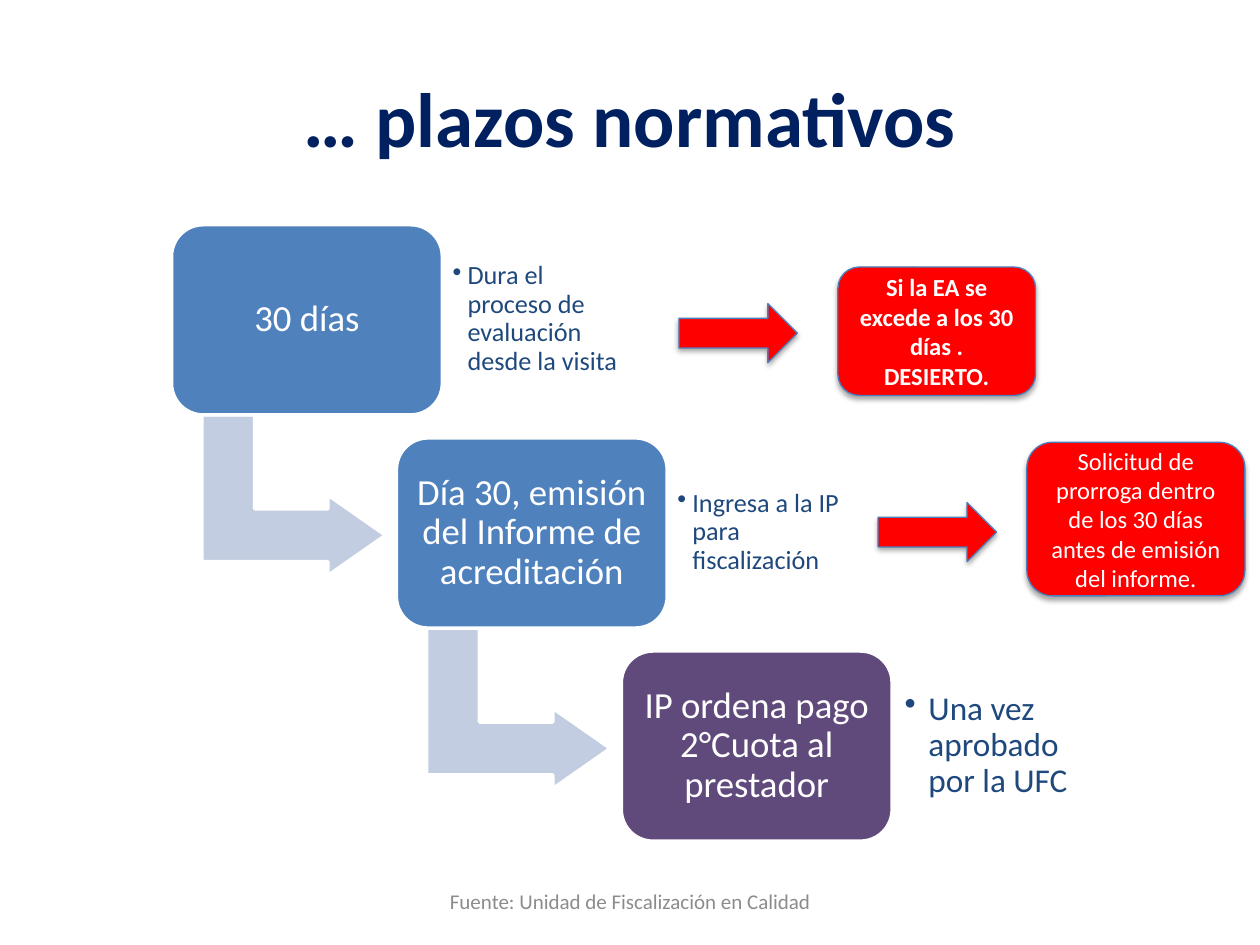
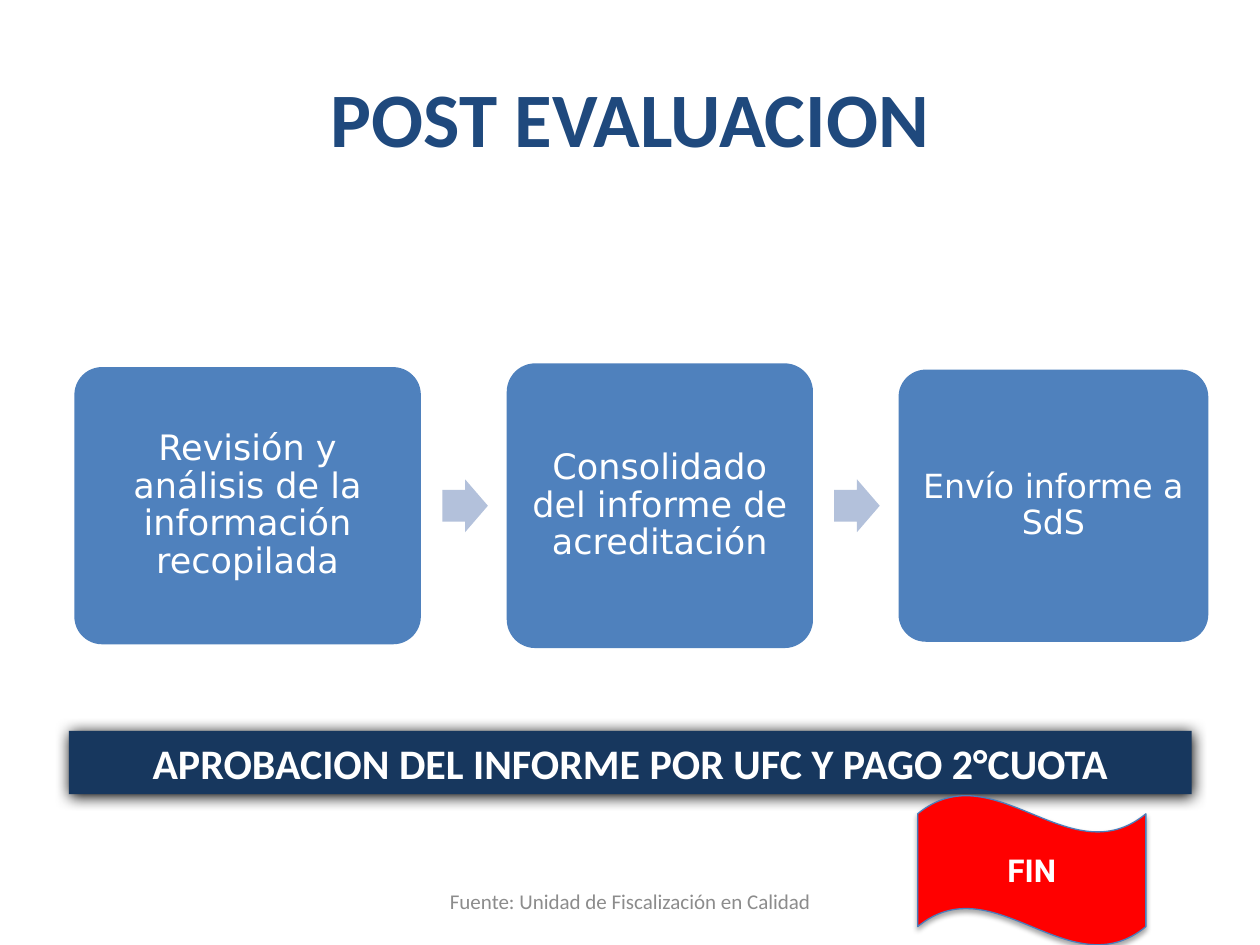
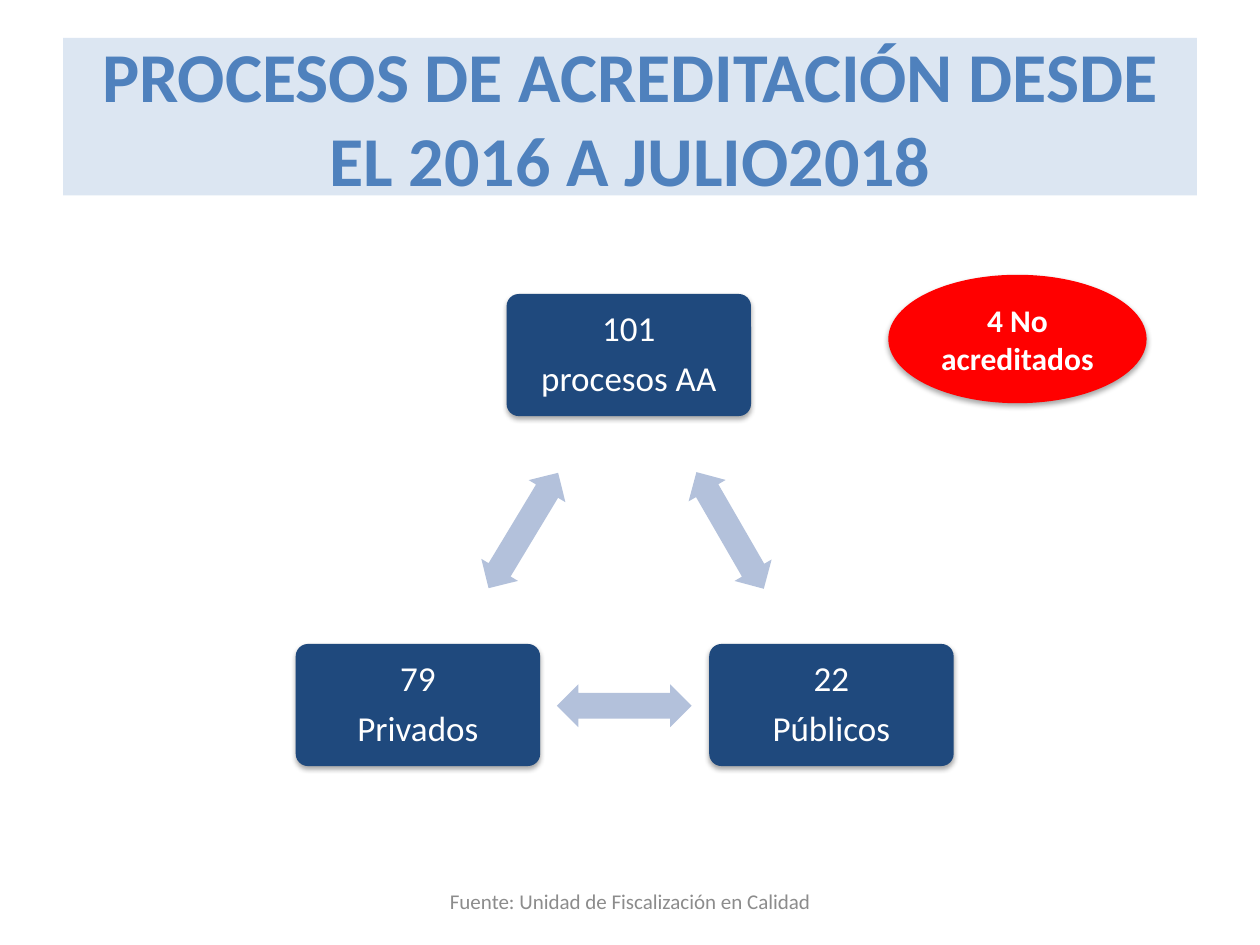
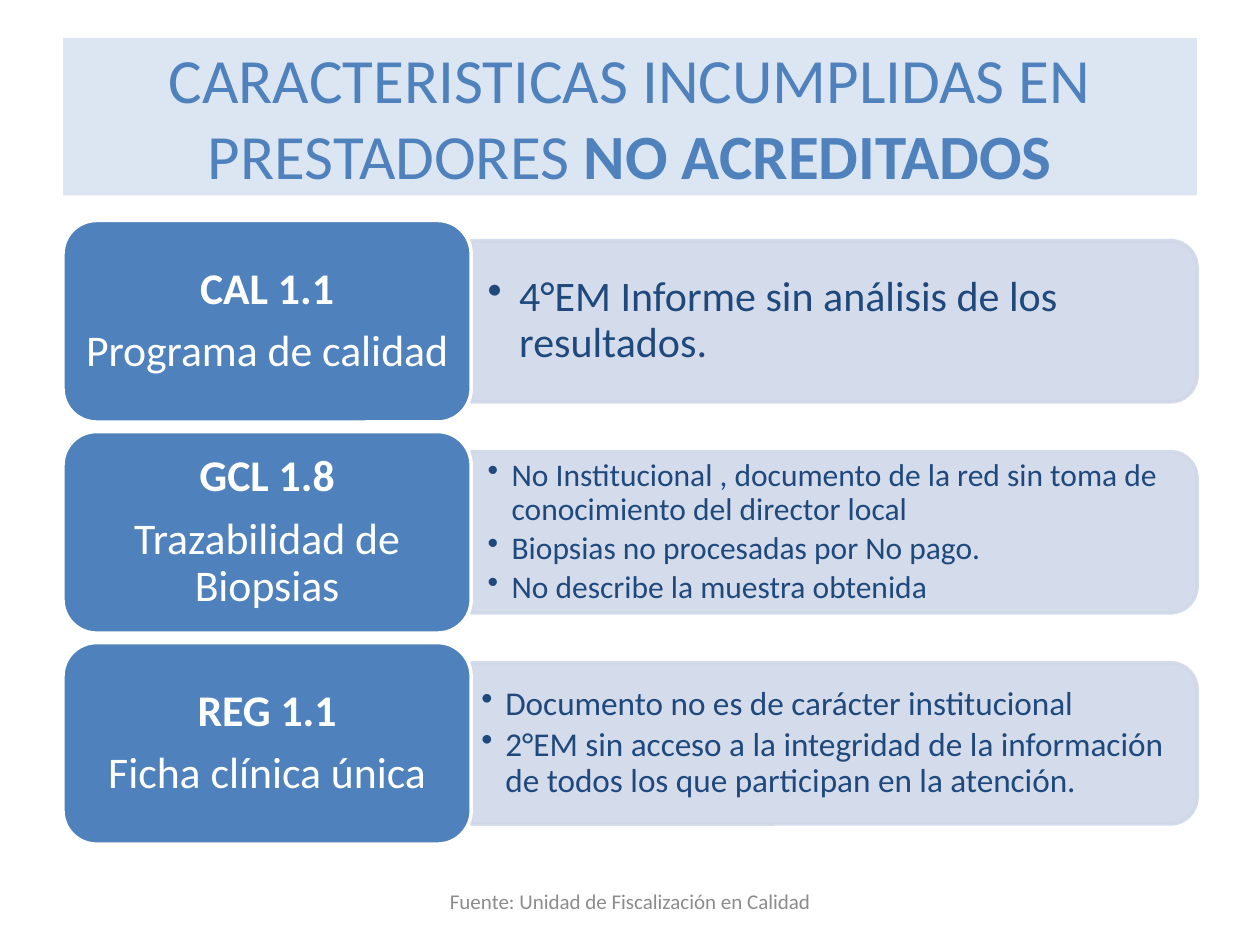
from lxml.etree import SubElement
from pptx import Presentation
from pptx.dml.color import RGBColor
from pptx.enum.shapes import MSO_SHAPE as Form
from pptx.enum.text import MSO_ANCHOR as Anchor, MSO_AUTO_SIZE as AutoSize, PP_ALIGN as Align
from pptx.oxml.ns import qn
from pptx.util import Pt

COLORS = {
    "white": "FFFFFF",
    "navy": "002060",
    "blue": "4F81BD",
    "dark": "1F497D",
    "banner": "17375E",
    "purple": "604A7B",
    "red": "FF0000",
    "outline": "4B7EBC",
    "arrow": "B3C1DB",
    "bent": "C2CDE1",
    "detail": "D0D8E8",
    "band": "DCE6F2",
    "gray": "8C8C8C",
}
SOFT_SHADOW = {"blur": 3.1, "distance": 1.8, "opacity": 35}
BANNER_SHADOW = {"blur": 8.5, "distance": 1, "opacity": 100}
SOURCE = "Fuente: Unidad de Fiscalización en Calidad"
BOLD_MARK = "**"
DIAGRAM_TEXT = {"spacing": 0.9, "after": 0.35}


def color(name):
    return RGBColor.from_string(COLORS[name])


def add_bullet(para, indent):
    properties = para._p.get_or_add_pPr()
    properties.set("marL", str(Pt(indent)))
    properties.set("indent", str(-Pt(indent)))
    SubElement(properties, qn("a:buChar")).set("char", "•")


def write(frame, text, size=14, ink="white", font="Calibri", bold=False, align=Align.CENTER,
          spacing=None, after=0, indent=0, inset=(7.2, 3.6)):
    frame.word_wrap = True
    frame.auto_size = AutoSize.NONE
    frame.vertical_anchor = Anchor.MIDDLE
    frame.margin_left = frame.margin_right = Pt(inset[0])
    frame.margin_top = frame.margin_bottom = Pt(inset[1])
    for number, line in enumerate(text.split("\n")):
        para = frame.add_paragraph() if number else frame.paragraphs[0]
        para.alignment = align
        if spacing:
            para.line_spacing = spacing
            para.space_after = Pt(round(size * after, 2))
        if indent:
            para.level = 1
            add_bullet(para, indent)
        for place, part in enumerate(line.split(BOLD_MARK)):
            if part:
                span = para.add_run()
                span.text = part
                span.font.size = Pt(size)
                span.font.name = font
                span.font.bold = bold or place % 2 == 1
                span.font.color.rgb = color(ink)


def add_shadow(shape, blur, distance, opacity):
    effects = shape.element.spPr.find(qn("a:effectLst"))
    shadow = SubElement(effects, qn("a:outerShdw"), blurRad=str(Pt(blur)), dist=str(Pt(distance)),
                        dir="5400000", rotWithShape="0")
    black = SubElement(shadow, qn("a:srgbClr"), val="000000")
    SubElement(black, qn("a:alpha"), val=str(opacity * 1000))


def add_form(page, form, left, top, width, height, fill, line=None, weight=2, adjust=(),
             rotation=0, opacity=100, shadow=None, text="", **text_format):
    shape = page.shapes.add_shape(form, Pt(left), Pt(top), Pt(width), Pt(height))
    shape.rotation = rotation
    for number, value in enumerate(adjust):
        shape.adjustments[number] = value
    shape.fill.solid()
    shape.fill.fore_color.rgb = color(fill)
    if line:
        shape.line.color.rgb = color(line)
        shape.line.width = Pt(weight)
    else:
        shape.line.fill.background()
    if opacity < 100:
        for paint in shape.element.spPr.iter(qn("a:srgbClr")):
            SubElement(paint, qn("a:alpha"), val=str(opacity * 1000))
    shape.shadow.inherit = False
    if shadow:
        add_shadow(shape, **shadow)
    if text:
        write(shape.text_frame, text, **text_format)
    return shape


def add_alert(page, form, left, top, width, height, **options):
    return add_form(page, form, left, top, width, height, "red", line="outline", weight=0.75,
                    shadow=SOFT_SHADOW, **options)


def add_text(page, left, top, width, height, text, **text_format):
    box = page.shapes.add_textbox(Pt(left), Pt(top), Pt(width), Pt(height))
    write(box.text_frame, text, **text_format)


def add_bullets(page, left, top, width, height, text, **text_format):
    add_text(page, left, top, width, height, text, ink="dark", align=Align.LEFT,
             spacing=0.9, after=0.15, **text_format)


def add_page(deck, title, size, ink, bold=True, band=None):
    page = deck.slides.add_slide(deck.slide_layouts[5])
    heading = page.shapes.title
    heading.left, heading.top, heading.width, heading.height = Pt(36), Pt(21.6), Pt(648), Pt(90)
    if band:
        heading.fill.solid()
        heading.fill.fore_color.rgb = color(band)
    write(heading.text_frame, title, size=size, ink=ink, bold=bold)
    add_text(page, 246.2, 500.4, 228, 28.8, SOURCE, size=12, ink="gray")
    return page


def build_deadlines(deck):
    page = add_page(deck, "… plazos normativos", 44, "navy")
    steps = [
        ("30 días", "blue", "Dura el proceso de evaluación desde la visita", 15, 8.6, 5.8),
        ("Día 30, emisión del Informe de acreditación", "blue",
         "Ingresa a la IP para fiscalización", 15, 8.6, 5.8),
        ("IP ordena pago 2°Cuota al prestador", "purple",
         "Una vez aprobado por la UFC", 19, 13.7, 7.2),
    ]
    for number, (label, fill, note, size, indent, inset) in enumerate(steps):
        left, top = 98 + 128.5 * number, 128.4 + 121.8 * number
        if number < len(steps) - 1:
            add_form(page, Form.BENT_UP_ARROW, left + 23.8, top + 102, 92, 105, "bent",
                     line="white", adjust=(0.328, 0.25, 0.358), rotation=90)
        add_form(page, Form.ROUNDED_RECTANGLE, left, top, 154.8, 108.7, fill, line="white",
                 text=label, size=21, inset=(6.5, 6.5), **DIAGRAM_TEXT)
        add_bullets(page, left + 154.8, top + 10, 113, 87.8, note, size=size, indent=indent,
                    inset=(inset, inset))
    for left, top in ((388, 173.5), (501.8, 287.2)):
        add_alert(page, Form.RIGHT_ARROW, left, top, 67.7, 33.8)
    add_alert(page, Form.ROUNDED_RECTANGLE, 478.8, 152.6, 113, 73.4, bold=True,
              text="Si la EA se excede a los 30 días . DESIERTO.")
    add_alert(page, Form.ROUNDED_RECTANGLE, 586.8, 252.7, 124.6, 87.8,
              text="Solicitud de prorroga dentro de los 30 días antes de emisión del informe.")


def build_closing(deck):
    page = add_page(deck, "POST EVALUACION", 44, "dark")
    cards = [
        (42.5, 198, 158.4, "Revisión y análisis de la información recopilada", 20),
        (289.6, 175, 162.7, "Consolidado del informe de acreditación", 20),
        (513.5, 177, 155.5, "Envío informe a SdS", 19),
    ]
    middle = 289
    for number, (left, width, height, label, size) in enumerate(cards):
        if number:
            add_form(page, Form.RIGHT_ARROW, left - 36.8, middle - 15.1, 26, 30.2, "arrow",
                     adjust=(0.6, 0.5))
        add_form(page, Form.ROUNDED_RECTANGLE, left, middle - height / 2, width, height, "blue",
                 adjust=(0.1,), text=label, size=size, font="DejaVu Sans", inset=(5.8, 5.8),
                 **DIAGRAM_TEXT)
    add_form(page, Form.RECTANGLE, 39.4, 417.6, 641.5, 36.2, "banner", shadow=BANNER_SHADOW,
             text="APROBACION DEL INFORME POR UFC Y PAGO 2°CUOTA", size=24, bold=True)
    add_alert(page, Form.WAVE, 524.4, 454.3, 130.4, 86, text="FIN", size=18, font="Roboto",
              bold=True)


def build_totals(deck):
    page = add_page(deck, "PROCESOS DE ACREDITACIÓN DESDE EL 2016 A JULIO2018", 40, "blue",
                    band="band")
    nodes = [
        (289.5, 168, "101\nprocesos AA"),
        (405.3, 368, "22\nPúblicos"),
        (169, 368, "79\nPrivados"),
    ]
    for left, top, label in nodes:
        add_form(page, Form.ROUNDED_RECTANGLE, left, top, 139.7, 69.8, "dark", adjust=(0.1,),
                 shadow=SOFT_SHADOW, text=label, size=20, inset=(5.8, 5.8), **DIAGRAM_TEXT)
    for left, top, rotation in ((378.7, 290.9, 60), (318.2, 391, 180), (260.6, 290.9, 301.1)):
        add_form(page, Form.LEFT_RIGHT_ARROW, left, top, 77, 24.5, "arrow", adjust=(0.6, 0.5),
                 rotation=rotation)
    add_form(page, Form.OVAL, 507.6, 157, 147.6, 73.4, "red", shadow=SOFT_SHADOW,
             text="4 No acreditados", size=18, bold=True)


def build_failures(deck):
    page = add_page(deck, "CARACTERISTICAS INCUMPLIDAS EN PRESTADORES **NO ACREDITADOS**", 36,
                    "blue", bold=False, band="band")
    rows = [
        ("**CAL 1.1**\nPrograma de calidad",
         "4°EM Informe sin análisis de los resultados.", 24, 18, (9.4, 4.3)),
        ("**GCL 1.8**\nTrazabilidad de Biopsias",
         "No Institucional , documento de la red sin toma de conocimiento del director local\n"
         "Biopsias no procesadas por No pago.\n"
         "No describe la muestra obtenida", 18, 13.7, (9.4, 4.3)),
        ("**REG 1.1**\nFicha clínica única",
         "Documento no es de carácter institucional\n"
         "2°EM sin acceso a la integridad de la información de todos los que participan en la "
         "atención.", 19, 13.7, (5.8, 2.9)),
    ]
    for number, (label, details, size, indent, inset) in enumerate(rows):
        top = 126 + 120.6 * number
        add_form(page, Form.ROUND_2_SAME_RECTANGLE, 430.6, top - 149.8, 92.2, 414.7, "detail",
                 line="detail", rotation=90, opacity=90)
        add_bullets(page, 269.3, top + 16, 410.4, 82.8, details, size=size, indent=indent,
                    inset=inset)
        add_form(page, Form.ROUNDED_RECTANGLE, 36, top, 233.3, 115.2, "blue", line="white",
                 text=label, size=25, inset=(7.2, 3.6), **DIAGRAM_TEXT)


def main():
    deck = Presentation()
    deck.slide_width, deck.slide_height = Pt(720), Pt(540)
    build_deadlines(deck)
    build_closing(deck)
    build_totals(deck)
    build_failures(deck)
    deck.save("out.pptx")


if __name__ == "__main__":
    main()
